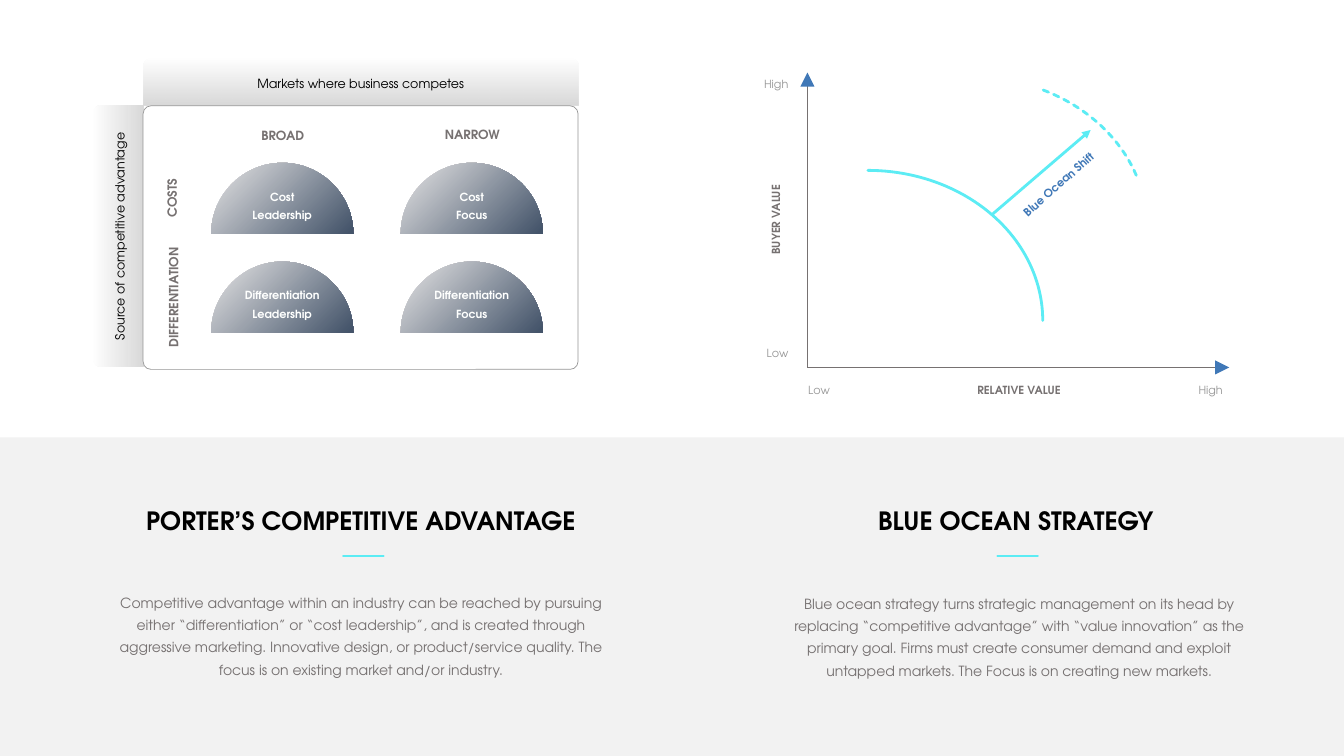
from lxml.etree import SubElement
from pptx import Presentation
from pptx.dml.color import RGBColor
from pptx.enum.dml import MSO_LINE_DASH_STYLE as Dash
from pptx.enum.shapes import MSO_CONNECTOR_TYPE as Connector
from pptx.enum.shapes import MSO_SHAPE as Preset
from pptx.enum.text import MSO_ANCHOR as Anchor
from pptx.enum.text import MSO_AUTO_SIZE as AutoSize
from pptx.enum.text import PP_ALIGN as Align
from pptx.oxml.ns import qn
from pptx.util import Inches, Pt

# Grid of 133.33 columns by 75 rows with square cells
COLUMNS, ROWS = 133.33, 75
CELL = Inches(7.5) / ROWS
FONT = "TeX Gyre Adventor"
BLACK, WHITE, GREY, PALE = "000000", "FFFFFF", "767171", "969696"
CYAN, BLUE, SHADE, BAND = "5CECF4", "4078B7", "D9D9D9", "F2F2F2"


def grid(*cells):
    return [round(cell * CELL) for cell in cells]


def color(hex_code):
    return RGBColor.from_string(hex_code)


def write(holder, text, size=8, hue=GREY, bold=False, align=Align.CENTER,
          anchor=Anchor.TOP, spacing=None, wrap=True, insets=(1, 0.5, 1, 0.5)):
    frame = holder.text_frame
    frame.auto_size = AutoSize.NONE
    frame.word_wrap = wrap
    frame.vertical_anchor = anchor
    (frame.margin_left, frame.margin_top,
     frame.margin_right, frame.margin_bottom) = grid(*insets)
    frame.text = text
    for paragraph in frame.paragraphs:
        paragraph.alignment = align
        if spacing:
            paragraph.line_spacing = Pt(spacing)
        for run in paragraph.runs:
            run.font.name, run.font.size = FONT, Pt(size)
            run.font.bold, run.font.color.rgb = bold, color(hue)


def label(slide, text, area, turn=0, wrap=False, **style):
    box = slide.shapes.add_textbox(*grid(*area))
    box.rotation = turn
    write(box, text, wrap=wrap, **style)


def outline(shape, hue, width, rounded=False):
    shape.line.color.rgb = color(hue)
    shape.line.width = Pt(width)
    if rounded:
        shape.element.spPr.find(qn("a:ln")).set("cap", "rnd")


def panel(slide, preset, area, fill=None, turn=0, adjust=()):
    shape = slide.shapes.add_shape(preset, *grid(*area))
    shape.shadow.inherit = False
    shape.rotation = turn
    for index, value in enumerate(adjust):
        shape.adjustments[index] = value
    if fill:
        shape.fill.solid()
        shape.fill.fore_color.rgb = color(fill)
    else:
        shape.fill.background()
    shape.line.fill.background()
    return shape


def shade(shape, start, end, angle, fade=False):
    shape.fill.gradient()
    shape.fill.gradient_angle = 360 - angle
    stops = shape.fill.gradient_stops
    for stop, hue, position in zip(stops, (start, end), (0, 0.98)):
        stop.color.rgb = color(hue)
        stop.position = position
    if fade:
        first = shape.element.spPr.find(".//" + qn("a:srgbClr"))
        SubElement(first, qn("a:alpha"), val="0")


def line(slide, start, end, hue, width, arrow=False, rounded=False):
    stroke = slide.shapes.add_connector(Connector.STRAIGHT, *grid(*start, *end))
    outline(stroke, hue, width, rounded)
    if arrow:
        SubElement(stroke.element.spPr.find(qn("a:ln")), qn("a:tailEnd"), type="triangle")
    SubElement(stroke.element.spPr, qn("a:effectLst"))


def arc(slide, left, top, dash=None, adjust=()):
    curve = panel(slide, Preset.ARC, (left, top, 34.7, 29.8), adjust=adjust)
    outline(curve, CYAN, 2, rounded=True)
    if dash:
        curve.line.dash_style = dash


def bend(segment, *points):
    """Turn a straight segment into a curve through its control points."""
    segment.tag = qn("a:cubicBezTo")
    segment.clear()
    for x, y in points:
        SubElement(segment, qn("a:pt"), x=str(x), y=str(y))


def dome(slide, left, top, text):
    width, radius = grid(14.1, 7.05)
    x, y = grid(left, top)
    pull = round(radius * 0.45)  # distance of control points from the corners
    builder = slide.shapes.build_freeform(x + radius, y)
    builder.add_line_segments([(x + width, y + radius), (x, y + radius),
                               (x + radius, y)], close=True)
    half = builder.convert_to_shape()
    right_side, _, left_side = half.element.spPr.findall(".//" + qn("a:lnTo"))
    bend(right_side, (width - pull, 0), (width, pull), (width, radius))
    bend(left_side, (0, pull), (pull, 0), (radius, 0))
    half.shadow.inherit = False
    half.line.fill.background()
    shade(half, "E7E6E6", "44546A", 45)
    write(half, text, hue="FEFFFE", bold=True, anchor=Anchor.MIDDLE,
          spacing=13, insets=(1, 1.5, 1, 0.5))


def porter_matrix(slide):
    # Shaded side and top headers
    for text, area, turn, corners in (
            ("Source of competitive advantage", (-1.2, 21, 25.9, 4.9), 270, (0.15, 0)),
            ("Markets where business competes", (14.2, 5.8, 43.15, 4.7), 0, ())):
        header = panel(slide, Preset.ROUND_2_SAME_RECTANGLE, area, SHADE, turn, corners)
        shade(header, SHADE, SHADE, 90, fade=True)
        write(header, text, size=9, hue=BLACK, anchor=Anchor.MIDDLE, insets=[0.4] * 4)

    frame = panel(slide, Preset.ROUNDED_RECTANGLE, (14.2, 10.5, 43.15, 26.15),
                  WHITE, adjust=[0.03])
    outline(frame, PALE, 0.5)

    # Two by two strategies
    strategies = (("Cost\nLeadership", "Cost\nFocus"),
                  ("Differentiation Leadership", "Differentiation\nFocus"))
    for row, pair in enumerate(strategies):
        for column, strategy in enumerate(pair):
            dome(slide, 20.95 + 18.8 * column, 16.15 + 9.8 * row, strategy)

    # Column and row names
    for text, area, turn in (("BROAD", (24.9, 12.2, 6.3, 2.5), 0),
                             ("NARROW", (43.1, 12.1, 7.5, 2.5), 0),
                             ("COSTS", (14.1, 18.4, 5.9, 2.5), 270),
                             ("DIFFERENTIATION", (11, 28.25, 12.4, 2.5), 270)):
        label(slide, text, area, turn, size=9, bold=True)


def ocean_chart(slide):
    # Axes with their tips
    origin = (80.1, 36.45)
    for end, tip, turn in (((80.1, 8), (79.4, 7.2, 1.4, 1.4), 0),
                           ((121, 36.45), (120.55, 35.75, 1.4, 1.4), 90)):
        line(slide, origin, end, GREY, 0.75)
        panel(slide, Preset.ISOSCELES_TRIANGLE, tip, BLUE, turn)

    # Present curve, shifted curve and the move between them
    arc(slide, 68.75, 16.9)
    line(slide, (98.4, 21.3), (108.2, 12.9), CYAN, 2, arrow=True)
    arc(slide, 79.1, 7.65, Dash.SQUARE_DOT, (178.42, 205.71))
    label(slide, "Blue Ocean Shift", (99.6, 17.1, 10.9, 2.4), 318.4,
          hue=BLUE, bold=True, align=Align.LEFT)

    # Scale ends and axis names
    for text, area, align in (("High", (73.4, 7.2, 5.8, 2.6), Align.RIGHT),
                              ("Low", (73.8, 33.9, 5.4, 2.6), Align.RIGHT),
                              ("High", (116.5, 37.5, 5.8, 2.6), Align.RIGHT),
                              ("Low", (79.2, 37.5, 5.4, 2.6), Align.LEFT)):
        label(slide, text, area, hue=PALE, align=align)
    label(slide, "RELATIVE VALUE", (95.9, 37.5, 10.4, 2.4), bold=True)
    label(slide, "BUYER VALUE", (72.5, 20.6, 9, 2.4), 270, bold=True)


def descriptions(slide):
    heading = dict(size=18, hue=BLACK, bold=True, wrap=False)
    title = slide.shapes.title
    title.left, title.top, title.width, title.height = grid(4.6, 49.6, 62.4, 5.2)
    write(title, "PORTER’S COMPETITIVE ADVANTAGE", **heading)
    title.element.getparent().append(title.element)  # bring in front of the band
    label(slide, "BLUE OCEAN STRATEGY", (85.85, 49.6, 29.8, 4), **heading)

    for area, text in (
            ((10.85, 57.9, 49.9, 10),
             "Competitive advantage within an industry can be reached by pursuing "
             "either “differentiation” or “cost leadership”, and is created through "
             "aggressive marketing. Innovative design, or product/service quality. "
             "The focus is on existing market and/or industry."),
            ((77.45, 58, 47.3, 9.7),
             "Blue ocean strategy turns strategic management on its head by "
             "replacing “competitive advantage” with “value innovation” as the "
             "primary goal. Firms must create consumer demand and exploit "
             "untapped markets. The Focus is on creating new markets.")):
        label(slide, text, area, wrap=True, size=10, spacing=16)
    for left in (34.05, 98.95):
        line(slide, (left, 55.2), (left + 4, 55.2), CYAN, 1.5, rounded=True)


def main():
    deck = Presentation()
    deck.slide_width, deck.slide_height = grid(COLUMNS, ROWS)
    slide = deck.slides.add_slide(deck.slide_layouts[5])
    panel(slide, Preset.RECTANGLE, (0, 43.4, COLUMNS, 31.6), BAND)
    porter_matrix(slide)
    ocean_chart(slide)
    descriptions(slide)
    deck.save("out.pptx")


if __name__ == "__main__":
    main()
